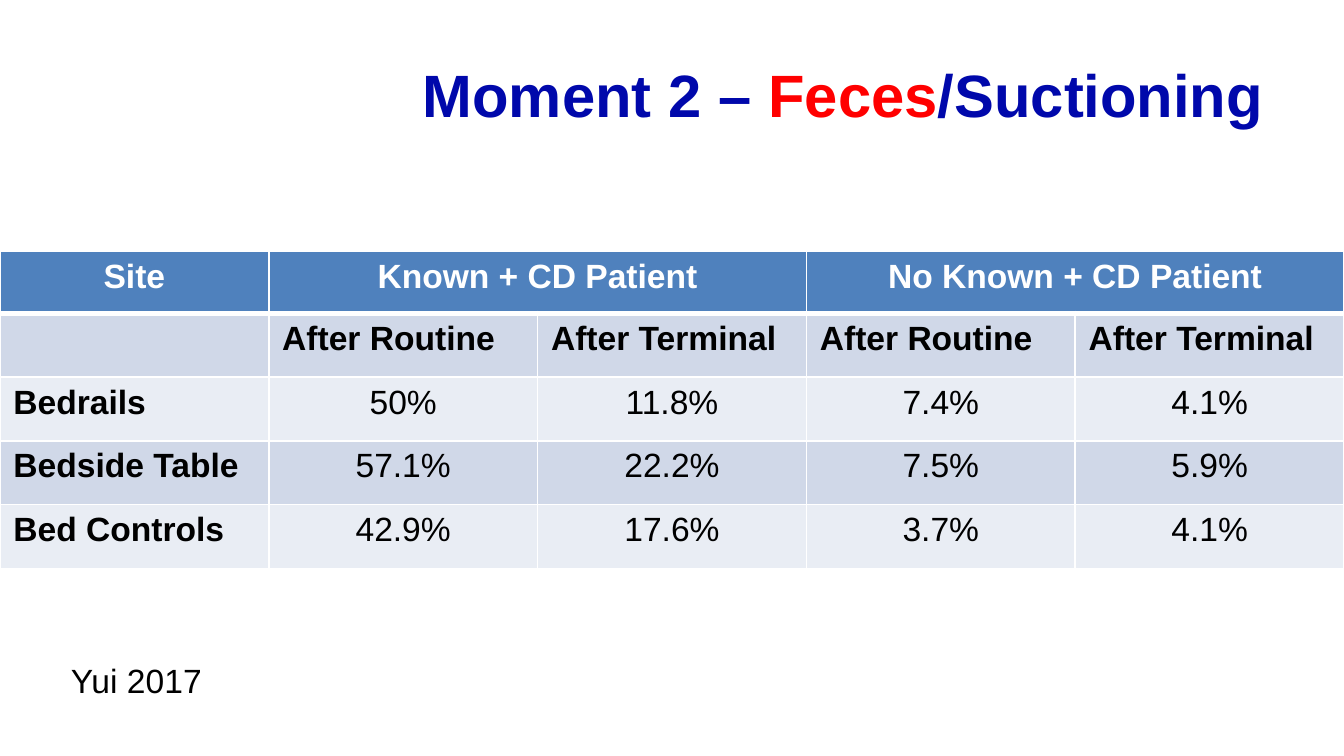
from dataclasses import dataclass

from lxml.etree import SubElement
from pptx import Presentation
from pptx.dml.color import RGBColor
from pptx.enum.text import MSO_ANCHOR, PP_ALIGN
from pptx.oxml.ns import qn
from pptx.util import Inches, Pt


@dataclass(frozen=True)
class Theme:
    font: str = "Arial"
    title_size: int = 32
    body_size: int = 18
    navy: str = "0008AB"
    red: str = "FF0000"
    black: str = "000000"
    white: str = "FFFFFF"
    header: str = "4F81BD"
    band_dark: str = "D0D8E8"
    band_light: str = "E9EDF4"


THEME = Theme()

ROWS = [
    ["Site", "Known + CD Patient", "", "No Known + CD Patient", ""],
    ["", "After Routine", "After Terminal", "After Routine", "After Terminal"],
    ["Bedrails", "50%", "11.8%", "7.4%", "4.1%"],
    ["Bedside Table", "57.1%", "22.2%", "7.5%", "5.9%"],
    ["Bed Controls", "42.9%", "17.6%", "3.7%", "4.1%"],
]


def write(tf, runs, size=THEME.body_size, bold=False, align=PP_ALIGN.LEFT):
    """Fill the first paragraph with (text, colour) runs."""
    p = tf.paragraphs[0]
    p.alignment = align
    p.font.size = Pt(size)
    for text, color in runs:
        r = p.add_run()
        r.text = text
        r.font.name = THEME.font
        r.font.size = Pt(size)
        r.font.bold = bold
        r.font.color.rgb = RGBColor.from_string(color)


def add_text(s, left, top, width, height, runs, anchor=MSO_ANCHOR.TOP, **fmt):
    sp = s.shapes.add_textbox(Inches(left), Inches(top), Inches(width), Inches(height))
    tf = sp.text_frame
    tf.word_wrap = True
    tf.vertical_anchor = anchor
    write(tf, runs, **fmt)


def set_borders(cell, bottom=1, top=1):
    tc_pr = cell._tc.get_or_add_tcPr()
    for side, width in (("L", 1), ("R", 1), ("T", top), ("B", bottom)):
        ln = SubElement(tc_pr, qn(f"a:ln{side}"), w=str(Pt(width)))
        fill = SubElement(ln, qn("a:solidFill"))
        SubElement(fill, qn("a:srgbClr"), val=THEME.white)


def style_cell(cell, row, col, text):
    is_header = row == 0
    is_value = row > 1 and col > 0
    # Borders come before the fill in the cell properties
    set_borders(cell, bottom=3 if is_header else 1, top=3 if row == 1 else 1)
    band = THEME.band_dark if row % 2 else THEME.band_light
    cell.fill.solid()
    cell.fill.fore_color.rgb = RGBColor.from_string(THEME.header if is_header else band)
    color = THEME.white if is_header else THEME.black
    write(cell.text_frame, [(text, color)] if text else [], bold=not is_value,
          align=PP_ALIGN.CENTER if is_header or is_value else PP_ALIGN.LEFT)


def add_rates_table(s, left, top, width, height, header_height):
    n_rows, n_cols = len(ROWS), len(ROWS[0])
    row_height = (height - header_height) / (n_rows - 1)
    table = s.shapes.add_table(n_rows, n_cols, Inches(left), Inches(top),
                               Inches(width), Inches(height)).table
    for column in table.columns:
        column.width = Inches(width / n_cols)
    for i, row in enumerate(table.rows):
        row.height = Inches(row_height if i else header_height)
    for i, texts in enumerate(ROWS):
        for j, text in enumerate(texts):
            style_cell(table.cell(i, j), i, j, text)
    # Each patient group spans its two cleaning stages
    for j in (1, 3):
        table.cell(0, j).merge(table.cell(0, j + 1))


def main():
    prs = Presentation()
    # Widescreen, 16:9
    prs.slide_width, prs.slide_height = Inches(10), Inches(10 * 9 / 16)
    s = prs.slides.add_slide(prs.slide_layouts[6])

    # Title
    add_text(s, 2.5, 0.23, 7, 0.94,
             [("Moment 2 – ", THEME.navy), ("Feces", THEME.red),
              ("/Suctioning", THEME.navy)],
             anchor=MSO_ANCHOR.MIDDLE, size=THEME.title_size, bold=True,
             align=PP_ALIGN.RIGHT)

    # Contamination rates
    add_rates_table(s, 0, 1.87, 10, 2.36, header_height=0.46)

    # Citation
    add_text(s, 0.43, 4.86, 1.5, 0.4, [("Yui 2017", THEME.black)])

    prs.save("out.pptx")


if __name__ == "__main__":
    main()
